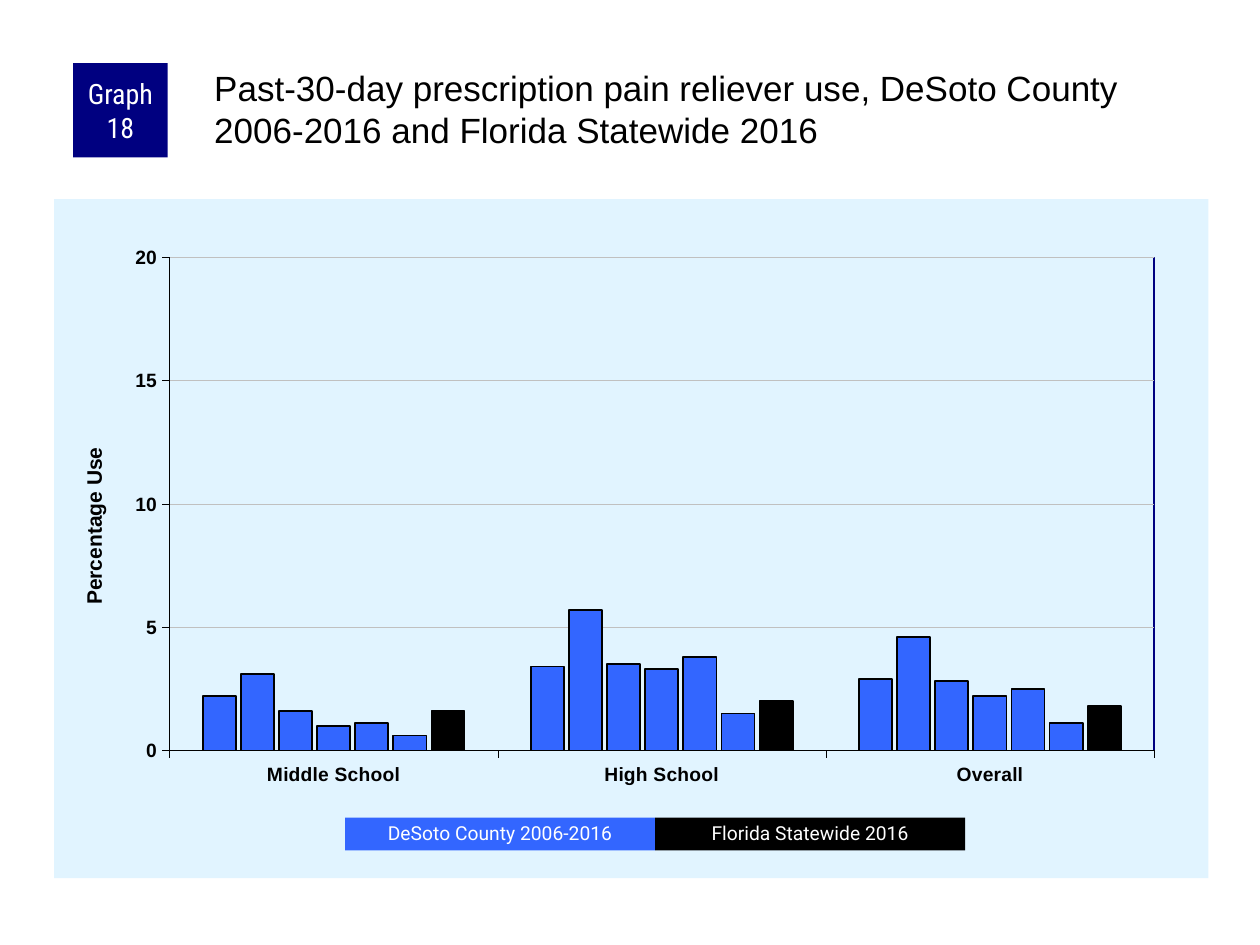
from pptx import Presentation
from pptx import util as u
from pptx.chart.data import CategoryChartData
from pptx.dml.color import RGBColor
from pptx.enum import chart as ch, shapes, text
from pptx.oxml import parse_xml
from pptx.oxml.ns import nsdecls, qn

BLUE, BLACK, NAVY, WHITE = "3366FF", "000000", "000080", "FFFFFF"
PALE, GREY = "E1F4FF", "C0C0C0"
LEVELS = ["Middle School", "High School", "Overall"]
USE = [
    (2.2, 3.4, 2.9),
    (3.1, 5.7, 4.6),
    (1.6, 3.5, 2.8),
    (1.0, 3.3, 2.2),
    (1.1, 3.8, 2.5),
    (0.6, 1.5, 1.1),
    (1.6, 2.0, 1.8),
]


def rgb(code):
    """Turn a hex string into a colour."""
    return RGBColor.from_string(code)


def style(font, name, size, color, bold=False):
    """Set the face, size, colour and weight of a font."""
    font.name, font.size, font.bold = name, u.Pt(size), bold
    font.color.rgb = rgb(color)


def stroke(line, color, width):
    """Set the colour and width of a line."""
    line.color.rgb = rgb(color)
    line.width = u.Pt(width)


def layout(**parts):
    """Make a manual chart layout from fractions of the chart."""
    inner = '<c:layoutTarget val="inner"/>' if "w" in parts else ""
    modes = "".join(f'<c:{k}Mode val="edge"/>' for k in "xy")
    sizes = "".join(f'<c:{k} val="{v}"/>' for k, v in parts.items())
    return parse_xml(f'<c:layout {nsdecls("c")}><c:manualLayout>{inner}{modes}'
                     f'{sizes}</c:manualLayout></c:layout>')


def place(parent, spot):
    """Replace the layout of a chart part."""
    for old in parent.findall(qn("c:layout")):
        parent.remove(old)
    text_part = parent.find(qn("c:tx"))
    if text_part is None:
        parent.insert(0, spot)
    else:
        text_part.addnext(spot)


def paint(fill, line):
    """Make chart area properties from fill and line markup."""
    return parse_xml(f'<c:spPr {nsdecls("c", "a")}>{fill}{line}</c:spPr>')


def frame(chart):
    """Place the plot area and colour the chart and plot backgrounds."""
    root = chart.element
    plot = root.find(".//" + qn("c:plotArea"))
    place(plot, layout(x=0.1, y=0.086, w=0.853, h=0.726))
    solid = '<a:solidFill><a:srgbClr val="{}"/></a:solidFill>'
    edge = f'<a:ln w="12700">{solid.format(NAVY)}</a:ln>'
    plot.append(paint("<a:noFill/>", edge))
    root.find(qn("c:chart")).addnext(
        paint(solid.format(PALE), "<a:ln><a:noFill/></a:ln>"))


def name_axis(axis, label):
    """Give an axis a title that reads upwards."""
    body = axis.axis_title.text_frame
    body.text = label
    style(body.paragraphs[0].font, "Arial", 12, BLACK, True)
    title = axis.axis_title.element
    turn = title.find(".//" + qn("a:bodyPr"))
    turn.set("rot", "-5400000")
    turn.set("vert", "horz")
    place(title, layout(x=0.02, y=0.36))


def add_bars(slide):
    """Add the column chart of use by school level."""
    data = CategoryChartData()
    data.categories = LEVELS
    for n, vals in enumerate(USE, 1):
        data.add_series(f"Series {n}", vals)
    chart = slide.shapes.add_chart(
        ch.XL_CHART_TYPE.COLUMN_CLUSTERED, u.Inches(0.43), u.Inches(1.58),
        u.Inches(9.16), u.Inches(5.39), data).chart
    style(chart.font, "Arial", 8, BLACK)
    chart.has_legend = chart.has_title = False
    plot = chart.plots[0]
    plot.gap_width, plot.overlap, plot.vary_by_categories = 200, -15, False
    for n, series in enumerate(plot.series, 1):
        series.format.fill.solid()
        series.format.fill.fore_color.rgb = rgb(BLACK if n == len(USE) else BLUE)
        stroke(series.format.line, BLACK, 1)
    for axis in (chart.category_axis, chart.value_axis):
        style(axis.tick_labels.font, "Arial", 11, BLACK, True)
        stroke(axis.format.line, BLACK, 0.25)
        axis.major_tick_mark = ch.XL_TICK_MARK.OUTSIDE
    scale = chart.value_axis
    scale.minimum_scale, scale.maximum_scale, scale.major_unit = 0, 20, 5
    stroke(scale.major_gridlines.format.line, GREY, 0.25)
    name_axis(scale, "Percentage Use")
    frame(chart)


def add_box(slide, words, area, fill, face, size, space=1.0, inset=0.1):
    """Add a filled rectangle with centred white text."""
    box = slide.shapes.add_shape(
        shapes.MSO_SHAPE.RECTANGLE, *map(u.Inches, area))
    box.shadow.inherit = False
    box.fill.solid()
    box.fill.fore_color.rgb = rgb(fill)
    box.line.fill.background()
    body = box.text_frame
    body.text, body.word_wrap = words, True
    body.vertical_anchor = text.MSO_ANCHOR.MIDDLE
    body.margin_left = body.margin_right = u.Inches(inset)
    body.margin_top = body.margin_bottom = 0
    para = body.paragraphs[0]
    para.alignment, para.line_spacing = text.PP_ALIGN.CENTER, space
    style(para.font, face, size, WHITE)


def add_title(slide, words):
    """Add the heading text."""
    body = slide.shapes.add_textbox(
        *map(u.Inches, (1.67, 0.5, 7.92, 0.83))).text_frame
    body.text, body.word_wrap = words, True
    body.margin_left = body.margin_top = u.Inches(0.03)
    body.margin_right = body.margin_bottom = 0
    style(body.paragraphs[0].font, "Arial", 20, BLACK)


def main():
    """Build and save the slide."""
    deck = Presentation()
    deck.slide_width, deck.slide_height = u.Inches(10), u.Inches(7.5)
    slide = deck.slides.add_slide(deck.slide_layouts[6])
    add_bars(slide)
    add_box(slide, "Graph 18", (0.58, 0.5, 0.75, 0.75), NAVY,
            "Roboto Condensed", 16, inset=0.05)
    add_title(slide, "Past-30-day prescription pain reliever use, "
              "DeSoto County 2006-2016 and Florida Statewide 2016")
    keys = [("DeSoto County 2006-2016", BLUE), ("Florida Statewide 2016", BLACK)]
    for n, (words, fill) in enumerate(keys):
        add_box(slide, words, (2.74 + 2.46 * n, 6.49, 2.46, 0.26), fill,
                "Roboto", 11, space=0.9)
    deck.save("out.pptx")


if __name__ == "__main__":
    main()
